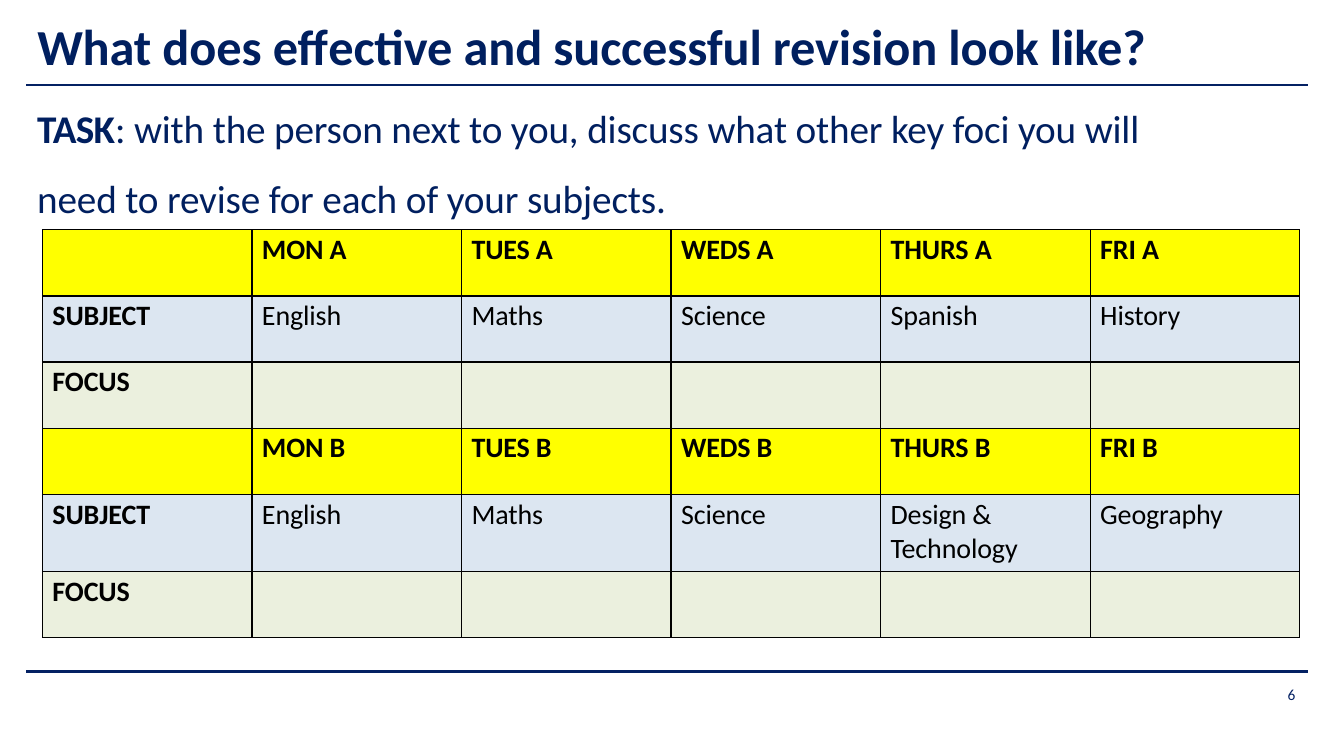
from lxml.etree import SubElement
from pptx import Presentation
from pptx.dml.color import RGBColor
from pptx.enum.shapes import MSO_CONNECTOR as Connector
from pptx.enum.text import MSO_ANCHOR as Anchor
from pptx.oxml import parse_xml
from pptx.oxml.ns import nsdecls, qn
from pptx.util import Inches, Pt

WIDTH, HEIGHT = Inches(13.33), Inches(7.5)
FONT = "Calibri"
NAVY = RGBColor(0x00, 0x1F, 0x5F)
RULE_BLUE = RGBColor(0x04, 0x21, 0x63)
BLACK = RGBColor(0x00, 0x00, 0x00)
YELLOW = RGBColor(0xFF, 0xFF, 0x00)
PALE_BLUE = RGBColor(0xDC, 0xE6, 0xF1)
PALE_GREEN = RGBColor(0xEB, 0xF0, 0xDE)

DAYS = ["MON", "TUES", "WEDS", "THURS", "FRI"]
WEEKS = {
    "A": ["English", "Maths", "Science", "Spanish", "History"],
    "B": ["English", "Maths", "Science", "Design &\nTechnology", "Geography"],
}


def across(percent):
    """Share of the slide's width."""
    return round(WIDTH * percent / 100)


def down(percent):
    """Share of the slide's height."""
    return round(HEIGHT * percent / 100)


def add_run(para, text, size, colour, bold=False, spacing=-0.1):
    run = para.add_run()
    run.text = text
    font = run.font
    font.name, font.size, font.bold = FONT, Pt(size), bold
    font.color.rgb = colour
    font._element.set("spc", str(round(spacing * 100)))


def set_insets(target, left=0, top=0):
    target.margin_left, target.margin_top = Inches(left), Inches(top)
    target.margin_right = target.margin_bottom = 0


def add_text(page, left, top, width, height, inset_left=0.01, inset_top=0.02):
    """Add a text box and return its first paragraph."""
    box = page.shapes.add_textbox(across(left), down(top), across(width), down(height))
    frame = box.text_frame
    frame.word_wrap = True
    set_insets(frame, inset_left, inset_top)
    return frame.paragraphs[0]


def add_rule(page, top, weight):
    rule = page.shapes.add_connector(
        Connector.STRAIGHT, across(1.95), down(top), across(97.3), down(top))
    rule.line.color.rgb = RULE_BLUE
    rule.line.width = Pt(weight)
    SubElement(rule._element.spPr, qn("a:effectLst"))


def add_borders(cell):
    properties = cell._tc.get_or_add_tcPr()
    for index, side in enumerate(("lnL", "lnR", "lnT", "lnB")):
        properties.insert(index, parse_xml(
            f'<a:{side} {nsdecls("a")} w="{Pt(1)}"><a:solidFill>'
            f'<a:srgbClr val="{BLACK}"/></a:solidFill></a:{side}>'))


def fill_cell(cell, text, colour, bold):
    cell.fill.solid()
    cell.fill.fore_color.rgb = colour
    add_borders(cell)
    set_insets(cell, 0.1, 0.03)
    cell.vertical_anchor = Anchor.TOP
    if not text:
        return
    frame = cell.text_frame
    for index, line in enumerate(text.split("\n")):
        para = frame.add_paragraph() if index else frame.paragraphs[0]
        add_run(para, line, 20, BLACK, bold)


def timetable_rows():
    """Yield the texts and fill colour of each row, three rows a week."""
    for week, subjects in WEEKS.items():
        yield [""] + [f"{day} {week}" for day in DAYS], YELLOW
        yield ["SUBJECT"] + subjects, PALE_BLUE
        yield ["FOCUS"] + [""] * len(DAYS), PALE_GREEN


def add_timetable(page):
    rows = list(timetable_rows())
    columns = len(DAYS) + 1
    table = page.shapes.add_table(
        len(rows), columns, across(3.15), down(30.4), across(93.55), down(54)).table
    table.first_row = table.horz_banding = False
    for column in table.columns:
        column.width = across(93.55 / columns)
    for r, (texts, colour) in enumerate(rows):
        has_two_lines = any("\n" in text for text in texts)
        table.rows[r].height = down(10.25 if has_two_lines else 8.75)
        for c, text in enumerate(texts):
            fill_cell(table.cell(r, c), text, colour, colour == YELLOW or c == 0)


def main():
    deck = Presentation()
    deck.slide_width, deck.slide_height = WIDTH, HEIGHT
    page = deck.slides.add_slide(deck.slide_layouts[6])

    # Rules under the heading and above the footer
    add_rule(page, 11.2, 1.5)
    add_rule(page, 88.8, 1.75)

    # Heading
    heading = add_text(page, 2.7, 1.73, 83.35, 8.4)
    add_run(heading, "What does effective and successful revision look like?", 36, NAVY, True)

    # Task
    task = add_text(page, 2.7, 10.4, 83.27, 19.07)
    task.line_spacing = 1.5
    add_run(task, "TASK", 28, NAVY, True, -0.5)
    add_run(task, ": with the person next to you, discuss what other key foci you will "
                  "need to revise for each of your subjects.", 28, NAVY)

    # Two-week timetable
    add_timetable(page)

    # Page number
    number = add_text(page, 95.5, 90.93, 1.8, 2.4, 0.04, 0)
    number.line_spacing = Pt(11.5)
    add_run(number, "6", 11, RULE_BLUE, spacing=0)

    deck.save("out.pptx")


if __name__ == "__main__":
    main()
